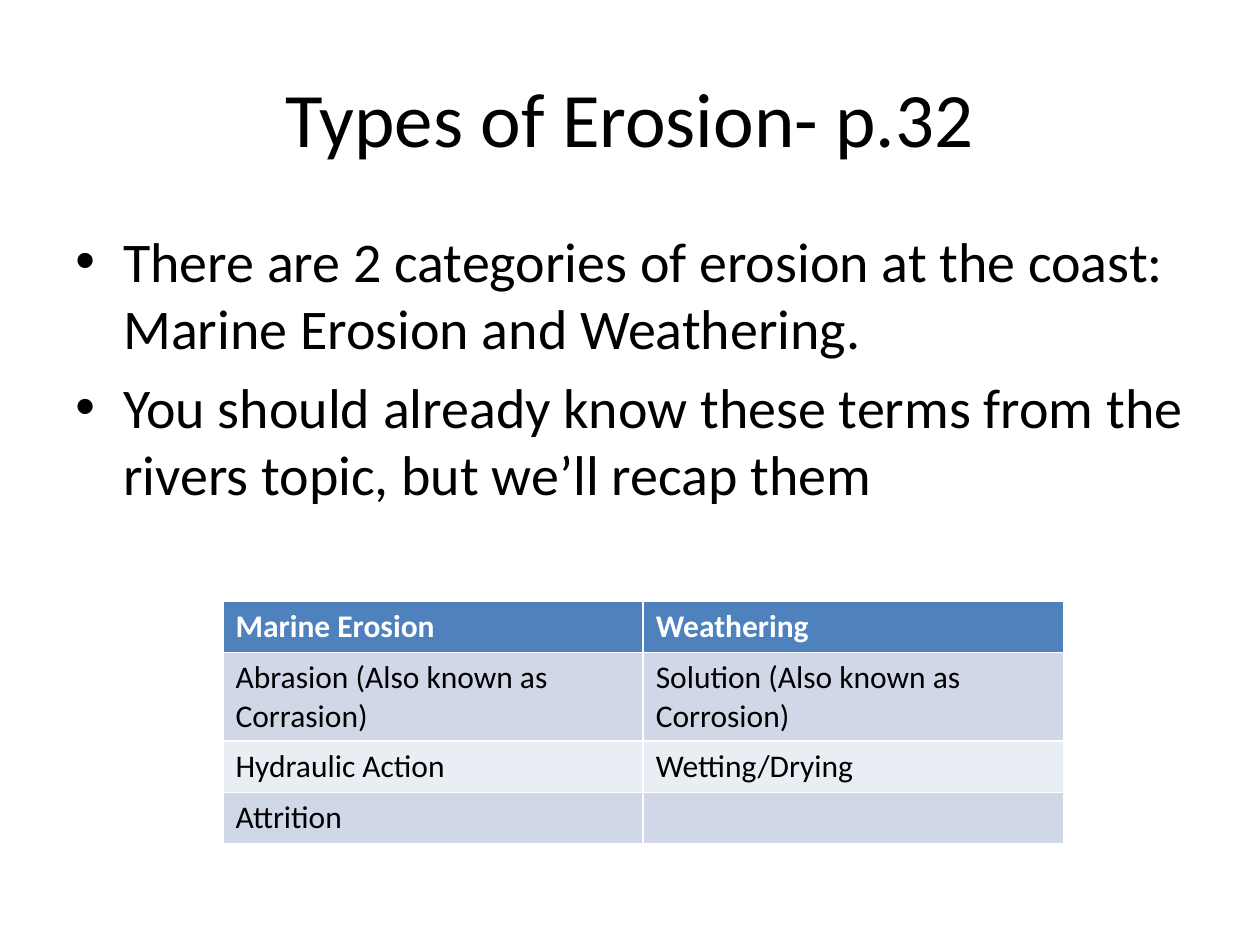
"""Build a slide on the types of coastal erosion."""
from lxml import etree
from pptx import Presentation
from pptx import util as u
from pptx.dml.color import RGBColor
from pptx.enum import text as t
from pptx.oxml.ns import qn

FONT = "Calibri"
HUES = {"ink": "000000", "white": "FFFFFF", "head": "4F81BD",
        "odd": "D0D8E8", "even": "E9EDF4"}
TITLE = "Types of Erosion- p.32"
POINTS = [
    "There are 2 categories of erosion at the coast: Marine Erosion and Weathering.",
    "You should already know these terms from the rivers topic, but we’ll recap them",
]
TERMS = [
    ("Marine Erosion", "Weathering"),
    ("Abrasion (Also known as Corrasion)", "Solution (Also known as Corrosion)"),
    ("Hydraulic Action", "Wetting/Drying"),
    ("Attrition", ""),
]


def add_run(para, words, size, hue="ink", bold=False):
    run = para.add_run()
    run.text = words
    font = run.font
    font.name, font.size, font.bold = FONT, u.Pt(size), bold
    font.color.rgb = RGBColor.from_string(HUES[hue])


def add_box(slide, *place):
    frame = slide.shapes.add_textbox(*map(u.Inches, place)).text_frame
    frame.word_wrap = True
    return frame


def add_title(slide):
    frame = add_box(slide, 0.5, 0.3, 9, 1.25)
    frame.vertical_anchor = t.MSO_ANCHOR.MIDDLE
    para = frame.paragraphs[0]
    para.alignment = t.PP_ALIGN.CENTER
    add_run(para, TITLE, 44)


def add_points(slide):
    frame = add_box(slide, 0.5, 1.75, 9, 4.95)
    for i, words in enumerate(POINTS):
        para = frame.add_paragraph() if i else frame.paragraphs[0]
        props = para._p.get_or_add_pPr()
        props.set("marL", str(u.Inches(0.38)))
        props.set("indent", str(u.Inches(-0.38)))
        etree.SubElement(props, qn("a:buFont")).set("typeface", "Arial")
        etree.SubElement(props, qn("a:buChar")).set("char", "•")
        if i:
            para.space_before = u.Pt(6.4)
        add_run(para, words, 32)


def add_terms(slide):
    rows, cols = len(TERMS), len(TERMS[0])
    place = map(u.Inches, (1.77, 4.77, 6.67, 0.41 * rows))
    table = slide.shapes.add_table(rows, cols, *place).table
    for r, row in enumerate(TERMS):
        head = r == 0
        fill = "head" if head else "odd" if r % 2 else "even"
        for c, words in enumerate(row):
            cell = table.cell(r, c)
            cell.fill.solid()
            cell.fill.fore_color.rgb = RGBColor.from_string(HUES[fill])
            if words:
                add_run(cell.text_frame.paragraphs[0], words, 18,
                        "white" if head else "ink", head)


def main():
    deck = Presentation()
    deck.slide_width, deck.slide_height = u.Inches(10), u.Inches(7.5)
    slide = deck.slides.add_slide(deck.slide_layouts[6])
    add_title(slide)
    add_points(slide)
    add_terms(slide)
    deck.save("out.pptx")


if __name__ == "__main__":
    main()
